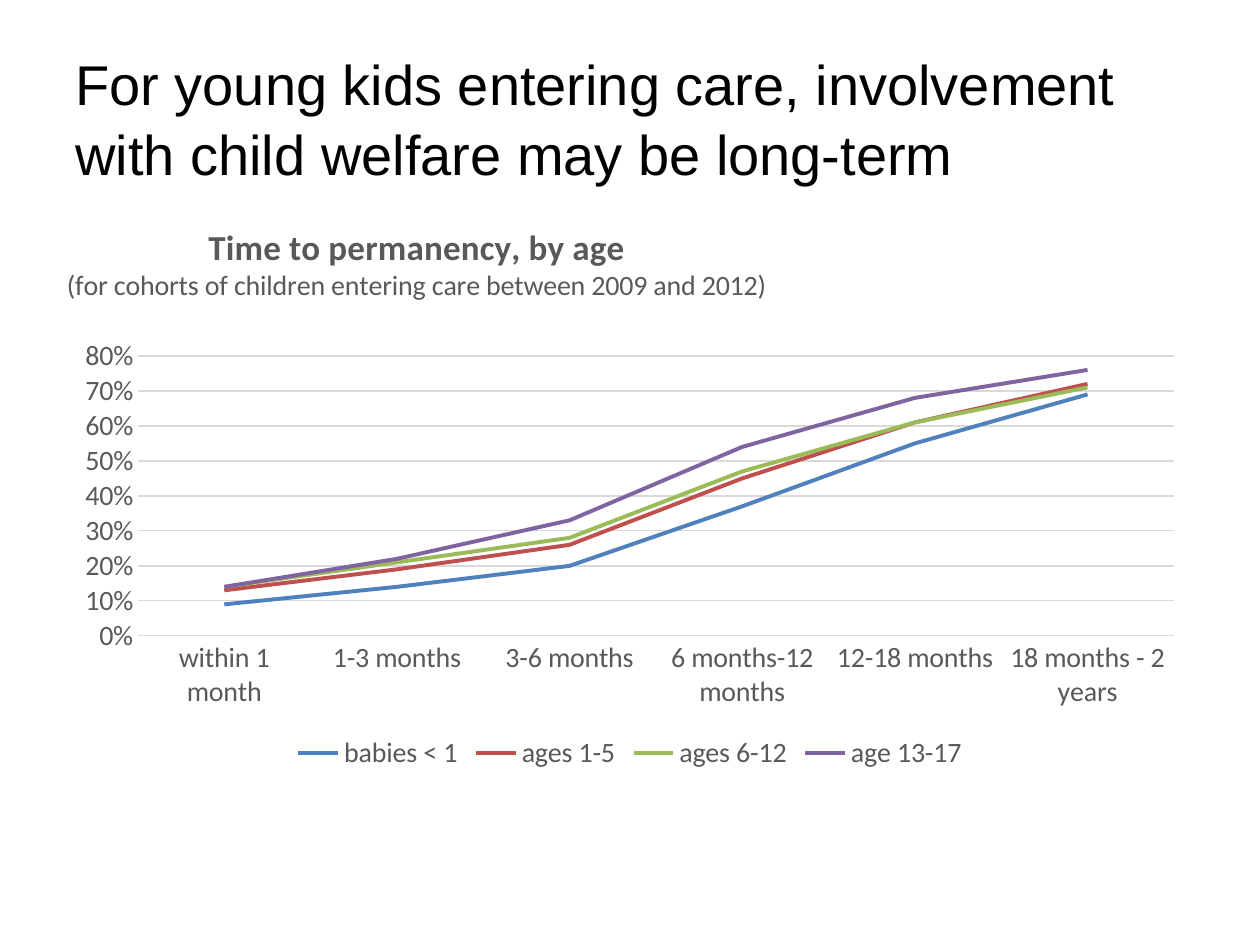
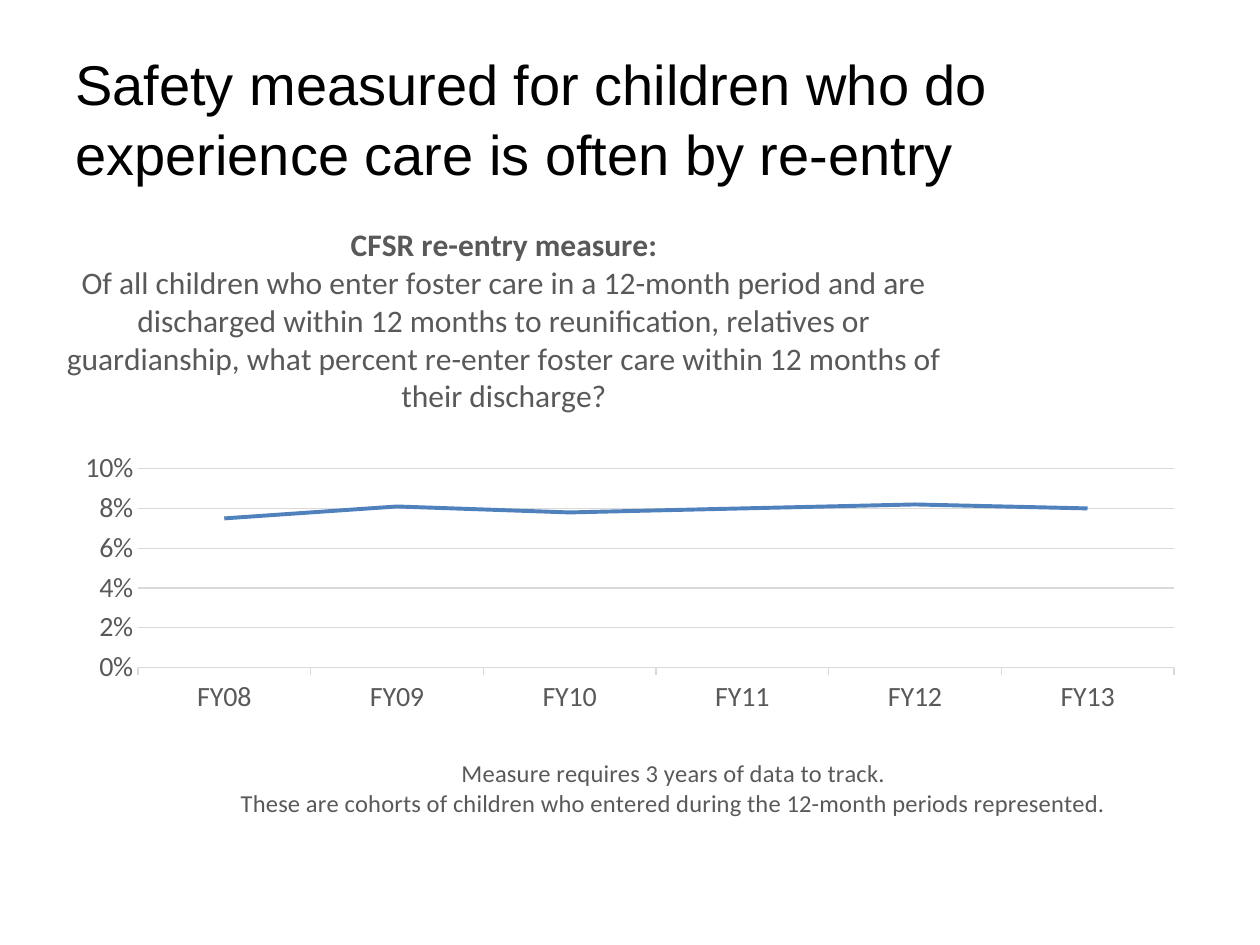
"""Two slides on child welfare outcomes: time to permanency and re-entry to care."""
from lxml.etree import SubElement
from pptx import Presentation
from pptx.chart.data import CategoryChartData
from pptx.dml.color import RGBColor
from pptx.enum.chart import XL_CHART_TYPE as ChartType
from pptx.enum.chart import XL_LEGEND_POSITION as LegendPosition
from pptx.enum.chart import XL_TICK_MARK as Tick
from pptx.enum.text import MSO_ANCHOR as Anchor
from pptx.oxml import parse_xml
from pptx.oxml.ns import nsdecls, qn
from pptx.util import Pt

PX = 914400 / 126
COLOURS = {"headline": "000000", "label": "595959", "grid": "D9D9D9",
           "blue": "4F81BD", "red": "C0504D", "green": "9BBB59", "purple": "8064A2"}
CHART_LEFT, CHART_TOP, CHART_WIDTH = 63, 220, 1134
PLOT_LEFT, PLOT_WIDTH = 138, 1036

STORIES = [
    {"headline": "For young kids entering care, involvement with child welfare may be long-term",
     "height": 556, "plot": (356, 280), "top": 0.8, "step": 0.1, "tick": Tick.NONE,
     "caption": [("Time to permanency, by age", 20, True),
                 ("(for cohorts of children entering care between 2009 and 2012)", 16, False)],
     "periods": ["within 1 month", "1-3 months", "3-6 months", "6 months-12 months",
                 "12-18 months", "18 months - 2 years"],
     "groups": [("babies < 1", "blue", (0.09, 0.14, 0.2, 0.37, 0.55, 0.69)),
                ("ages 1-5", "red", (0.13, 0.19, 0.26, 0.45, 0.61, 0.72)),
                ("ages 6-12", "green", (0.14, 0.21, 0.28, 0.47, 0.61, 0.71)),
                ("age 13-17", "purple", (0.14, 0.22, 0.33, 0.54, 0.68, 0.76))],
     "note": []},
    {"headline": "Safety measured for children who do experience care is often by re-entry",
     "height": 605, "plot": (470, 200), "top": 0.1, "step": 0.02, "tick": Tick.OUTSIDE,
     "caption": [("CFSR re-entry measure:", 18, True),
                 ("Of all children who enter foster care in a 12-month period and are "
                  "discharged within 12 months to reunification, relatives or guardianship, "
                  "what percent re-enter foster care within 12 months of their discharge?",
                  18, False)],
     "periods": ["FY08", "FY09", "FY10", "FY11", "FY12", "FY13"],
     "groups": [("Series 1", "blue", (0.075, 0.081, 0.078, 0.08, 0.082, 0.08))],
     "note": [("Measure requires 3 years of data to track.", 14, False),
              ("These are cohorts of children who entered during the 12-month periods "
               "represented.", 14, False)]},
]


def write_lines(frame, lines, font_name, colour):
    for index, (text, size, bold) in enumerate(lines):
        paragraph = frame.add_paragraph() if index else frame.paragraphs[0]
        run = paragraph.add_run()
        run.text = text
        for key, value in {"name": font_name, "size": Pt(size), "bold": bold}.items():
            setattr(run.font, key, value)
        run.font.color.rgb = RGBColor.from_string(COLOURS[colour])


def place(part, **fractions):
    for automatic in part.xpath("c:layout"):
        part.remove(automatic)
    layout = parse_xml(f"<c:layout {nsdecls('c')}/>")
    manual = SubElement(layout, qn("c:manualLayout"))
    if "w" in fractions:
        SubElement(manual, qn("c:layoutTarget")).set("val", "inner")
    for mode in ("xMode", "yMode"):
        SubElement(manual, qn(f"c:{mode}")).set("val", "edge")
    for key, value in fractions.items():
        SubElement(manual, qn(f"c:{key}")).set("val", f"{value:.4f}")
    part.insert(len(part.xpath("c:tx")), layout)


deck = Presentation()
deck.slide_width, deck.slide_height = round(1260 * PX), round(945 * PX)

for story in STORIES:
    slide = deck.slides.add_slide(deck.slide_layouts[6])
    headline = slide.shapes.add_textbox(*(round(n * PX) for n in (63, 38, 1134, 158)))
    frame = headline.text_frame
    for key, value in {"word_wrap": True, "vertical_anchor": Anchor.MIDDLE}.items():
        setattr(frame, key, value)
    write_lines(frame, [(story["headline"], 32, False)], "Arial", "headline")
    frame.paragraphs[0].line_spacing = 1.04

    outcomes = CategoryChartData(number_format="0%")
    outcomes.categories = story["periods"]
    for name, _, shares in story["groups"]:
        outcomes.add_series(name, shares)
    bounds = (CHART_LEFT, CHART_TOP, CHART_WIDTH, story["height"])
    chart = slide.shapes.add_chart(
        ChartType.LINE, *(round(n * PX) for n in bounds), outcomes).chart
    for key, value in {"name": "Calibri", "size": Pt(16)}.items():
        setattr(chart.font, key, value)
    chart.font.color.rgb = RGBColor.from_string(COLOURS["label"])

    chart.has_title = True
    write_lines(chart.chart_title.text_frame, story["caption"], "Calibri", "label")
    chart.chart_title.include_in_layout = False
    place(chart.element.xpath("c:chart/c:title")[0], x=0, y=0)
    plot_top, plot_height = story["plot"]
    place(chart.element.xpath("c:chart/c:plotArea")[0],
          x=(PLOT_LEFT - CHART_LEFT) / CHART_WIDTH,
          y=(plot_top - CHART_TOP) / story["height"],
          w=PLOT_WIDTH / CHART_WIDTH, h=plot_height / story["height"])

    chart.plots[0].vary_by_categories = False
    for trend, (_, colour, _) in zip(chart.plots[0].series, story["groups"]):
        trend.smooth = False
        trend.format.line.width = Pt(2.25)
        trend.format.line.color.rgb = RGBColor.from_string(COLOURS[colour])

    shares_axis, periods_axis = chart.value_axis, chart.category_axis
    for key, value in {"minimum_scale": 0, "maximum_scale": story["top"],
                       "major_unit": story["step"], "has_major_gridlines": True,
                       "major_tick_mark": Tick.NONE, "minor_tick_mark": Tick.NONE}.items():
        setattr(shares_axis, key, value)
    for key, value in {"number_format": "0%", "number_format_is_linked": False}.items():
        setattr(shares_axis.tick_labels, key, value)
    shares_axis.format.line.fill.background()
    periods_axis.major_tick_mark = story["tick"]
    periods_axis.minor_tick_mark = Tick.NONE
    for rule in (shares_axis.major_gridlines.format.line, periods_axis.format.line):
        rule.width = Pt(0.75)
        rule.color.rgb = RGBColor.from_string(COLOURS["grid"])

    if story["note"]:
        write_lines(periods_axis.axis_title.text_frame, story["note"], "Calibri", "label")
        place(chart.element.xpath(".//c:catAx/c:title")[0],
              x=(237 - CHART_LEFT) / CHART_WIDTH, y=(755 - CHART_TOP) / story["height"])

    chart.has_legend = len(story["groups"]) > 1
    if chart.has_legend:
        chart.legend.position = LegendPosition.BOTTOM
        chart.legend.include_in_layout = False

deck.save("out.pptx")
